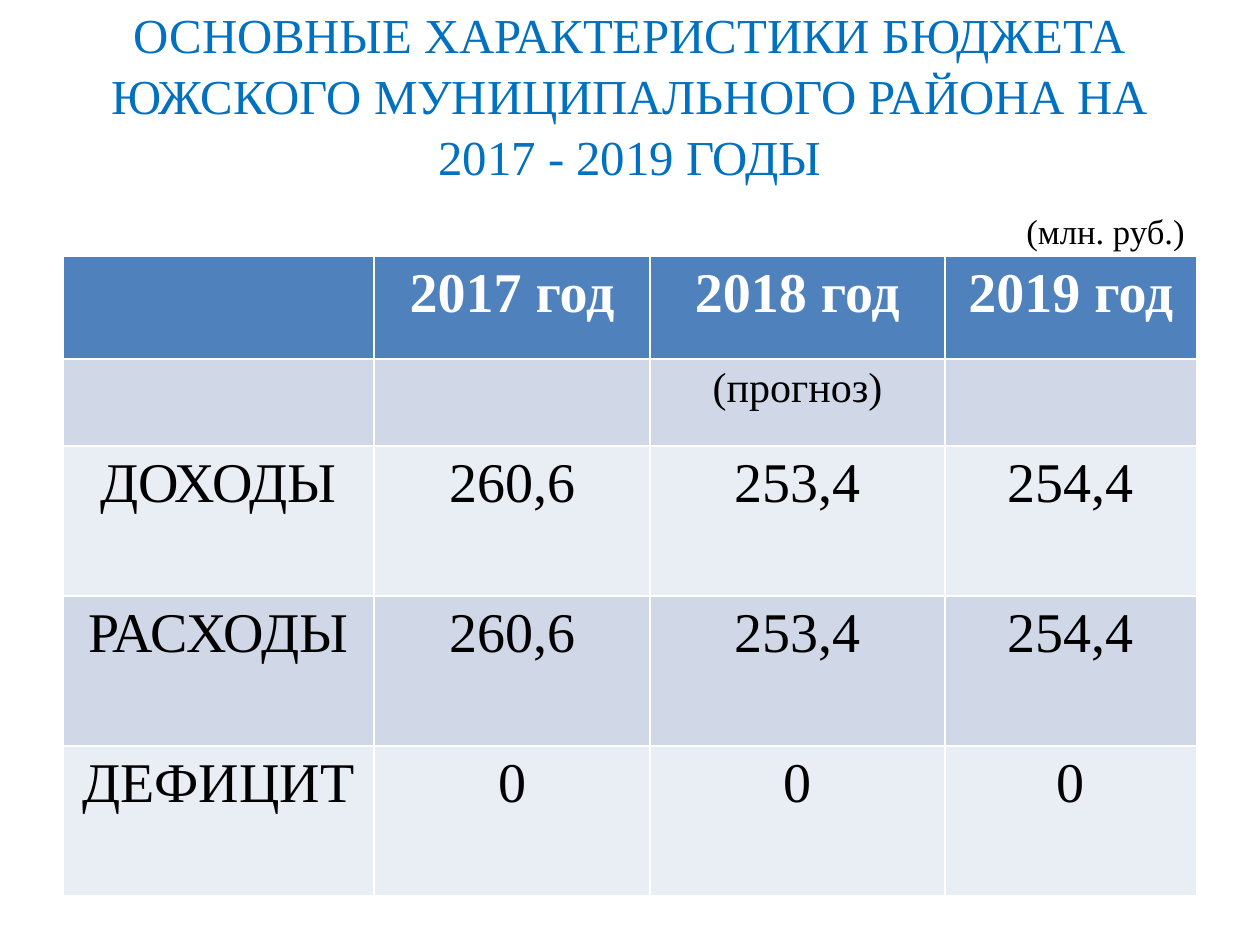
from pptx import Presentation
from pptx.dml.color import RGBColor
from pptx.enum.text import MSO_ANCHOR, PP_ALIGN
from pptx.util import Inches, Pt

CENTER, RIGHT = PP_ALIGN.CENTER, PP_ALIGN.RIGHT
MIDDLE = MSO_ANCHOR.MIDDLE
WHITE = RGBColor(0xFF, 0xFF, 0xFF)
BLACK = RGBColor(0x00, 0x00, 0x00)
TITLE_BLUE = RGBColor(0x00, 0x70, 0xC0)
HEADER_BLUE = RGBColor(0x4F, 0x81, 0xBD)
BANDS = (RGBColor(0xD0, 0xD8, 0xE8), RGBColor(0xE9, 0xED, 0xF4))
FONT = "Times New Roman"

TITLE = "ОСНОВНЫЕ ХАРАКТЕРИСТИКИ БЮДЖЕТА ЮЖСКОГО МУНИЦИПАЛЬНОГО РАЙОНА НА 2017 - 2019 ГОДЫ"
UNITS = "(млн. руб.)"
COLUMN_WIDTHS = (2.47, 2.19, 2.34, 2)
ROW_HEIGHTS = (0.82, 0.69, 1.19, 1.19, 1.19)
BUDGET = (
    ("", "2017 год", "2018 год", "2019 год"),
    ("", "", "(прогноз)", ""),
    ("ДОХОДЫ", "260,6", "253,4", "254,4"),
    ("РАСХОДЫ", "260,6", "253,4", "254,4"),
    ("ДЕФИЦИТ", "0", "0", "0"),
)


def write(para, text, size, color=BLACK, bold=False, align=CENTER):
    para.alignment = align
    span = para.add_run()
    span.text = text
    span.font.name = FONT
    span.font.size = Pt(size)
    span.font.bold = bold
    span.font.color.rgb = color


def add_heading(page, left, top, width, height):
    box = page.shapes.add_textbox(Inches(left), Inches(top), Inches(width), Inches(height))
    frame = box.text_frame
    frame.word_wrap = True
    frame.vertical_anchor = MIDDLE
    title = frame.paragraphs[0]
    title.line_spacing = 1.04
    write(title, TITLE, 27.9, color=TITLE_BLUE)
    units = frame.add_paragraph()
    units.space_before = Pt(14)
    write(units, UNITS, 19.8, align=RIGHT)


def add_budget_table(page, left, top, width, height):
    table = page.shapes.add_table(
        len(BUDGET), len(COLUMN_WIDTHS),
        Inches(left), Inches(top), Inches(width), Inches(height),
    ).table
    for column, column_width in zip(table.columns, COLUMN_WIDTHS):
        column.width = Inches(column_width)
    for row_index, (row, row_height) in enumerate(zip(table.rows, ROW_HEIGHTS)):
        row.height = Inches(row_height)
        header = row_index == 0
        size = 24 if row_index == 1 else 32
        for cell, text in zip(row.cells, BUDGET[row_index]):
            cell.fill.solid()
            cell.fill.fore_color.rgb = HEADER_BLUE if header else BANDS[(row_index - 1) % 2]
            if text:
                write(cell.text_frame.paragraphs[0], text, size,
                      color=WHITE if header else BLACK, bold=header)


def main():
    deck = Presentation()
    deck.slide_width = Inches(10)
    deck.slide_height = Inches(7.5)
    page = deck.slides.add_slide(deck.slide_layouts[6])
    add_heading(page, 0.5, 0.47, 9, 1.08)
    add_budget_table(page, 0.5, 2.03, 9, 5.08)
    deck.save("out.pptx")


if __name__ == "__main__":
    main()
